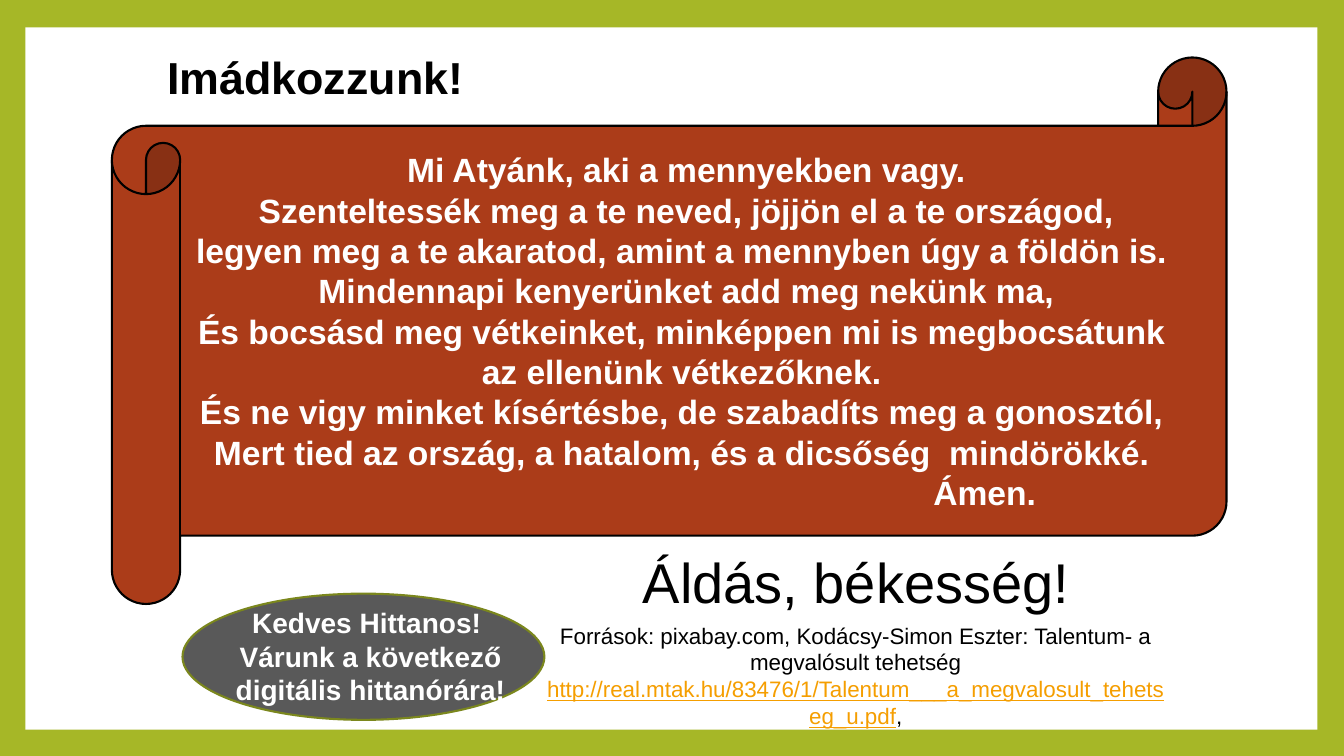
import pptx
import pptx.util
import pptx.dml.color
import pptx.enum.shapes
import pptx.enum.text

Cm = pptx.util.Cm
Pt = pptx.util.Pt
SHAPES = pptx.enum.shapes.MSO_SHAPE
ANCHORS = pptx.enum.text.MSO_ANCHOR

GREEN, OLIVE, WHITE, BLACK = "A6B727", "7B871D", "FFFFFF", "000000"
GREY, RUST, ORANGE = "595959", "AB3C19", "F59E00"

PRAYER = [
    "Mi Atyánk, aki a mennyekben vagy.",
    "Szenteltessék meg a te neved, jöjjön el a te országod,",
    "legyen meg a te akaratod, amint a mennyben úgy a földön is. ",
    "Mindennapi kenyerünket add meg nekünk ma,",
    "És bocsásd meg vétkeinket, minképpen mi is megbocsátunk ",
    "az ellenünk vétkezőknek. ",
    "És ne vigy minket kísértésbe, de szabadíts meg a gonosztól, ",
    "Mert tied az ország, a hatalom, és a dicsőség  mindörökké. ",
]
INVITATION = ["Kedves Hittanos! ", "Várunk a következő digitális hittanórára!"]
SOURCES = "Források: pixabay.com, Kodácsy-Simon Eszter: Talentum- a megvalósult tehetség "
SOURCE_LINK = "http://real.mtak.hu/83476/1/Talentum___a_megvalosult_tehetseg_u.pdf"


def color(value):
    return pptx.dml.color.RGBColor.from_string(value)


def add_span(para, text, size=16, fill=BLACK, bold=False, underline=False):
    span = para.add_run()
    span.text = text
    span.font.name = "Arial"
    span.font.size = Pt(size)
    span.font.bold = bold
    span.font.underline = underline
    span.font.color.rgb = color(fill)


def add_para(frame, text, indent=0, **style):
    """Add a centred paragraph, using the empty first one when it is free."""
    para = frame.paragraphs[0]
    if para.runs:
        para = frame.add_paragraph()
    para.alignment = pptx.enum.text.PP_ALIGN.CENTER
    if indent:
        para._p.get_or_add_pPr().set("marL", str(Cm(indent)))
    add_span(para, text, **style)
    return para


class PrayerPage:
    def __init__(self, deck):
        self.page = deck.slides.add_slide(deck.slide_layouts[6])
        background = self.page.background.fill
        background.solid()
        background.fore_color.rgb = color(GREEN)

    def shape(self, kind, left, top, width, height, fill, line=None):
        shape = self.page.shapes.add_shape(kind, Cm(left), Cm(top), Cm(width), Cm(height))
        shape.shadow.inherit = False
        shape.fill.solid()
        shape.fill.fore_color.rgb = color(fill)
        if line:
            shape.line.color.rgb = color(line)
            shape.line.width = Pt(1.5)
        else:
            shape.line.fill.background()
        return shape

    def text(self, left, top, width, height, lines, **style):
        box = self.page.shapes.add_textbox(Cm(left), Cm(top), Cm(width), Cm(height))
        box.text_frame.word_wrap = True
        for line in lines:
            add_para(box.text_frame, line, **style)
        return box.text_frame


def main():
    deck = pptx.Presentation()
    deck.slide_width, deck.slide_height = Cm(33.87), Cm(19.05)
    page = PrayerPage(deck)

    page.shape(SHAPES.RECTANGLE, 0.64, 0.69, 32.56, 18.39 - 0.69, WHITE)
    page.text(2.95, 1.14, 10, 1.55, ["Imádkozzunk!"], size=32, bold=True)

    page.shape(SHAPES.OVAL, 4.6, 14.96, 9.12, 3.18, GREY, OLIVE)
    page.text(4.78, 15.14, 9.12, 2.82, INVITATION, size=20, fill=WHITE, bold=True)
    page.text(13.1, 13.67, 16.94, 1.96, ["Áldás, békesség!"], size=40)

    scroll = page.shape(SHAPES.HORIZONTAL_SCROLL, 2.82, 1.45, 28.09, 13.77, RUST, BLACK)
    scroll.text_frame.word_wrap = True
    scroll.text_frame.vertical_anchor = ANCHORS.MIDDLE
    prayer_style = dict(size=24, fill=WHITE, bold=True)
    for line in PRAYER:
        add_para(scroll.text_frame, line, **prayer_style)
    add_para(scroll.text_frame, "Ámen.", indent=15.04, **prayer_style)

    sources = page.text(13.49, 15.54, 16.15, 3, [SOURCES]).paragraphs[0]
    add_span(sources, SOURCE_LINK, fill=ORANGE, underline=True)
    add_span(sources, ",")

    deck.save("out.pptx")


if __name__ == "__main__":
    main()
